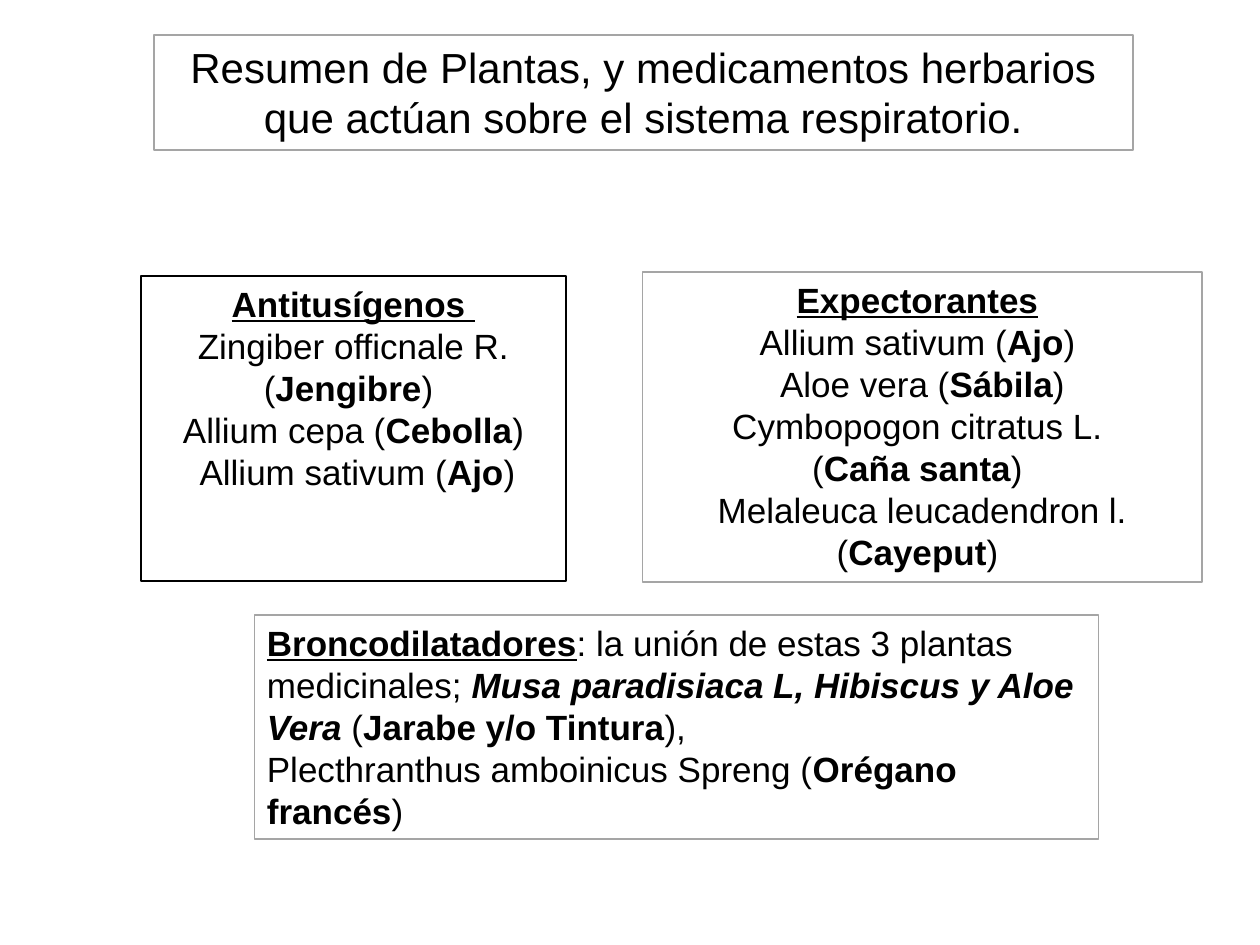
from dataclasses import dataclass

from lxml import etree
from pptx import Presentation
from pptx.dml.color import RGBColor
from pptx.enum import text
from pptx.oxml import ns
from pptx.util import Inches, Pt

BLACK, GRAY, WHITE = "000000", "A5A5A5", "FFFFFF"
CENTER, LEFT = text.PP_ALIGN.CENTER, text.PP_ALIGN.LEFT


@dataclass
class Span:
    text: str
    style: str = ""  # any of b (bold), i (italic), u (underline)


@dataclass
class Panel:
    left: float
    top: float
    width: float
    height: float
    paragraphs: list[list[Span]]
    size: int = 20
    border: str = GRAY
    align: text.PP_ALIGN = CENTER


def plant(species: str, common: str, end: str = ")") -> list[Span]:
    """A line with the species and its common name in bold brackets."""
    return [Span(f"{species}("), Span(common, "b"), Span(end)]


TITLE = Panel(1.22, 0.28, 7.77, 0.91, [[Span(
    "Resumen de Plantas, y medicamentos herbarios "
    "que actúan sobre el sistema respiratorio.")]], size=24)

ANTITUSSIVES = Panel(1.12, 2.19, 3.37, 2.42, [
    [Span("Antitusígenos ", "bu")],
    plant("Zingiber officnale R.", "Jengibre", ") "),
    plant("Allium cepa ", "Cebolla"),
    plant(" Allium sativum ", "Ajo"),
], border=BLACK)

EXPECTORANTS = Panel(5.1, 2.16, 4.44, 2.46, [
    [Span("Expectorantes", "bu"), Span(" ")],
    plant("Allium sativum ", "Ajo", ") "),
    plant("Aloe vera ", "Sábila"),
    [Span("Cymbopogon citratus L. ")],
    plant("", "Caña santa", ") "),
    plant("Melaleuca leucadendron l. ", "Cayeput", ") "),
])

BRONCHODILATORS = Panel(2.02, 4.88, 6.7, 1.78, [
    [Span("Broncodilatadores", "bu"),
     Span(": la unión de estas 3 plantas medicinales; "),
     Span("Musa paradisiaca L, Hibiscus y Aloe Vera", "bi"),
     *plant(" ", "Jarabe y/o Tintura", "),")],
    plant("Plecthranthus amboinicus Spreng ", "Orégano francés"),
], align=LEFT)


def color(value: str) -> RGBColor:
    return RGBColor.from_string(value)


def remove_bullet(para) -> None:
    properties = para._p.get_or_add_pPr()
    properties.set("marL", "0")
    properties.set("indent", "0")
    etree.SubElement(properties, ns.qn("a:buNone"))


def write_paragraph(para, spans: list[Span], panel: Panel) -> None:
    para.alignment = panel.align
    para.space_before = Pt(0)
    remove_bullet(para)
    for span in spans:
        run = para.add_run()
        run.text = span.text
        font = run.font
        font.name, font.size = "Arial", Pt(panel.size)
        font.color.rgb = color(BLACK)
        font.bold = "b" in span.style
        font.italic = "i" in span.style
        font.underline = "u" in span.style


def fill_panel(box, panel: Panel) -> None:
    """Place, outline and write a placeholder or text box."""
    box.left, box.top = Inches(panel.left), Inches(panel.top)
    box.width, box.height = Inches(panel.width), Inches(panel.height)
    box.fill.solid()
    box.fill.fore_color.rgb = color(WHITE)
    box.line.color.rgb = color(panel.border)
    box.line.width = Pt(1)
    frame = box.text_frame
    frame.word_wrap = True
    frame.auto_size = text.MSO_AUTO_SIZE.NONE
    frame.vertical_anchor = text.MSO_ANCHOR.TOP
    for number, spans in enumerate(panel.paragraphs):
        para = frame.add_paragraph() if number else frame.paragraphs[0]
        write_paragraph(para, spans, panel)


def main() -> None:
    deck = Presentation()
    deck.slide_width, deck.slide_height = Inches(10), Inches(7.5)
    two_content = deck.slide_layouts[3]
    slide = deck.slides.add_slide(two_content)
    title, left_body, right_body = slide.placeholders
    fill_panel(title, TITLE)
    fill_panel(left_body, ANTITUSSIVES)
    fill_panel(right_body, EXPECTORANTS)
    note = slide.shapes.add_textbox(0, 0, Inches(1), Inches(1))
    fill_panel(note, BRONCHODILATORS)
    deck.save("out.pptx")


if __name__ == "__main__":
    main()
